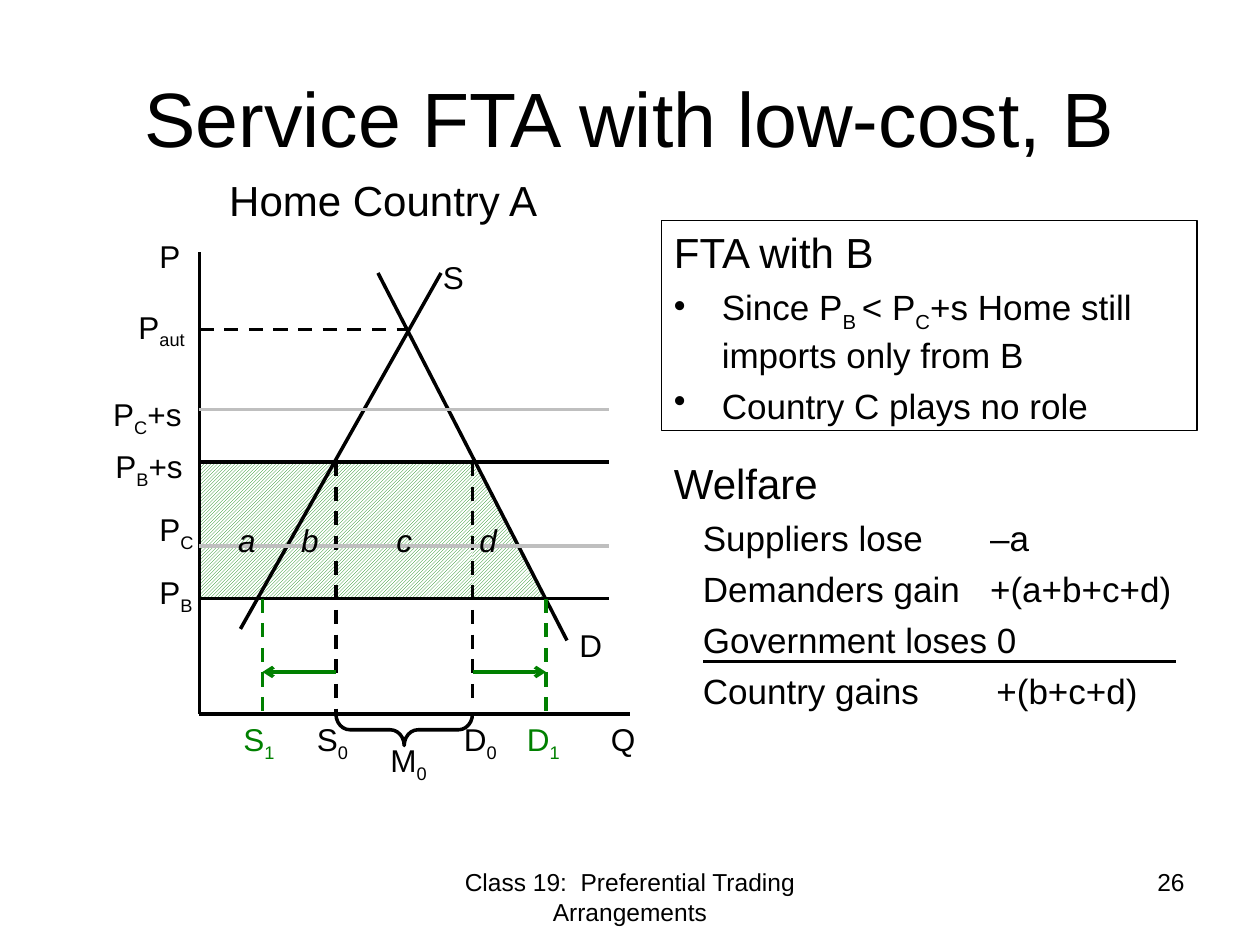
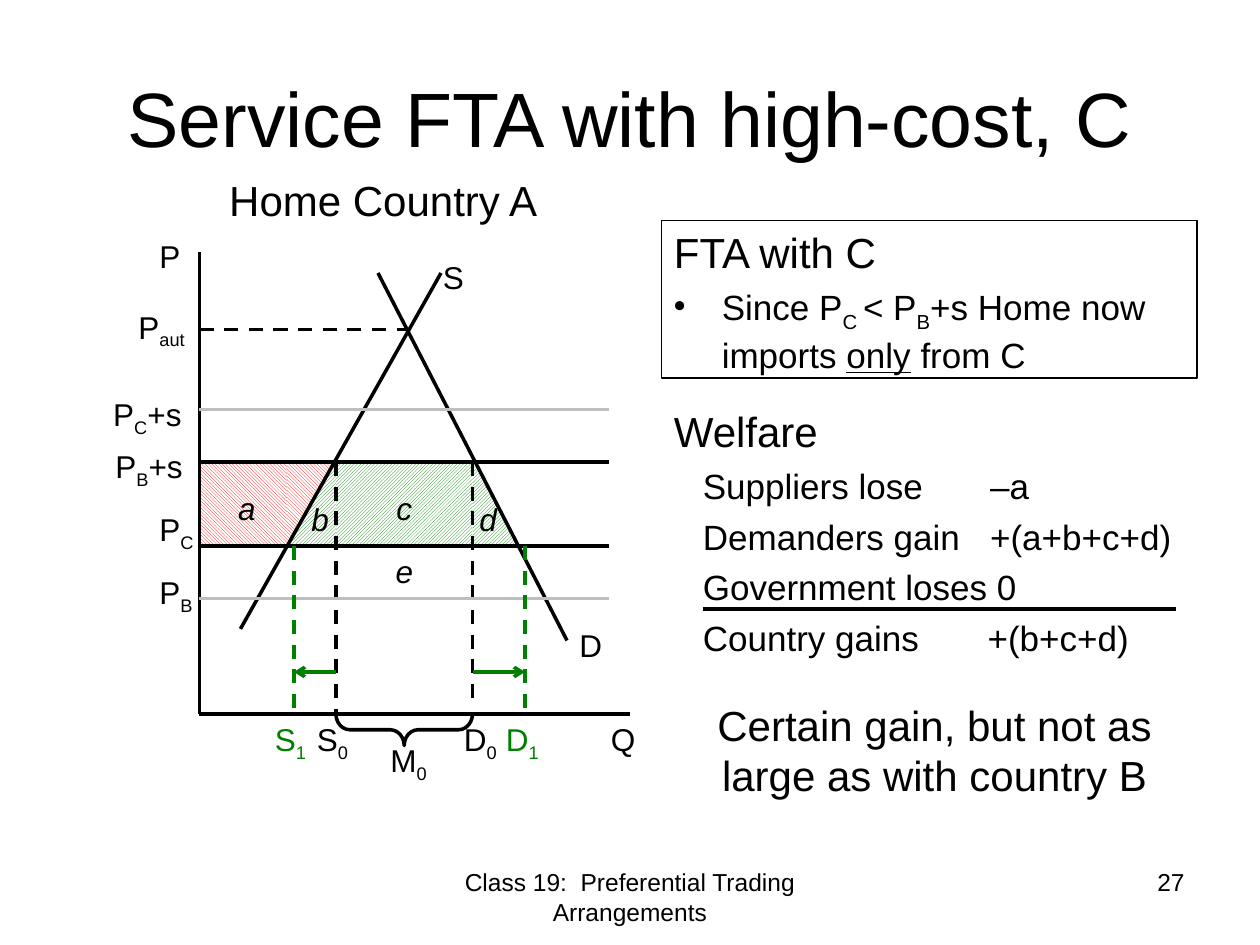
from lxml import etree
from pptx import Presentation
from pptx import util as u
from pptx.dml.color import RGBColor
from pptx.enum import dml, shapes, text
from pptx.oxml.ns import qn

COLS, ROWS = 120, 90
BLACK, WHITE, GRAY = "000000", "FFFFFF", "BFBFBF"
GREEN, RED = "008000", "FF0000"
FONT = "Arial"
TITLE, HEAD, BODY, LABEL, FOOT = 44, 24, 20, 18, 14
LEFT, CENTER, RIGHT = text.PP_ALIGN.LEFT, text.PP_ALIGN.CENTER, text.PP_ALIGN.RIGHT
RECT = shapes.MSO_SHAPE.RECTANGLE
TRIANGLE = shapes.MSO_SHAPE.RIGHT_TRIANGLE
HATCH = {GREEN: dml.MSO_PATTERN.DARK_UPWARD_DIAGONAL,
         RED: dml.MSO_PATTERN.DARK_DOWNWARD_DIAGONAL}

AXIS, BASE = 19, 68
S0, D0 = 32, 45
PC_S, PB_S, PC, PB = 39, 44, 52, 57


def color(value):
    return RGBColor.from_string(value)


class Deck:
    def __init__(self):
        self.prs = Presentation()
        self.prs.slide_width = u.Inches(10)
        self.prs.slide_height = u.Inches(7.5)
        self.slide = None

    def x(self, col):
        return round(self.prs.slide_width * col / COLS)

    def y(self, row):
        return round(self.prs.slide_height * row / ROWS)

    def box(self, col, row, w, h):
        return self.x(col), self.y(row), self.x(w), self.y(h)

    def start(self, title, number):
        self.slide = self.prs.slides.add_slide(self.prs.slide_layouts[6])
        tf = self.text(title, 6, 3.6, 108, 15, TITLE, CENTER)
        tf.vertical_anchor = text.MSO_ANCHOR.MIDDLE
        self.text("Class 19:  Preferential Trading Arrangements", 41, 82, 38, 6.2, FOOT, CENTER)
        self.text(str(number), 86, 82, 28, 6.2, FOOT, RIGHT)

    def runs(self, p, content, size, ink=BLACK, italic=False):
        for i, part in enumerate(content.split("_")):
            for j, piece in enumerate(part.split("~")):
                if not piece:
                    continue
                r = p.add_run()
                r.text = piece
                r.font.name = FONT
                r.font.size = u.Pt(size)
                r.font.color.rgb = color(ink)
                if italic:
                    r.font.italic = True
                if j % 2:
                    r.font.underline = True
                if i % 2:
                    r.font._element.set("baseline", "-25000")

    def frame(self, col, row, w, h, outline=None):
        sp = self.slide.shapes.add_textbox(*self.box(col, row, w, h))
        if outline:
            sp.line.color.rgb = color(outline)
            sp.line.width = u.Pt(0.75)
        sp.text_frame.word_wrap = True
        return sp.text_frame

    def text(self, content, col, row, w, h, size, align=LEFT, ink=BLACK, italic=False):
        tf = self.frame(col, row, w, h)
        p = tf.paragraphs[0]
        p.alignment = align
        self.runs(p, content, size, ink, italic)
        return tf

    def label(self, content, col, row, w=9, **style):
        self.text(content, col, row, w, 4.8, LABEL, **style)

    def panel(self, row, h, heading, outline=None):
        tf = self.frame(63, row, 51, h, outline)
        p = tf.paragraphs[0]
        p.space_before = u.Pt(5)
        self.runs(p, heading, HEAD)
        return tf

    def item(self, tf, content):
        p = tf.add_paragraph()
        p.space_before = u.Pt(5)
        self.runs(p, content, BODY)
        return p._p.get_or_add_pPr()

    def bullets(self, row, h, heading, items):
        tf = self.panel(row, h, heading, BLACK)
        for content in items:
            pPr = self.item(tf, content)
            pPr.set("marL", str(u.Inches(0.38)))
            pPr.set("indent", str(-u.Inches(0.38)))
            etree.SubElement(pPr, qn("a:buChar")).set("char", "•")

    def tabbed(self, row, h, heading, items):
        tf = self.panel(row, h, heading)
        for content, stop in items:
            pPr = self.item(tf, "\t" + content)
            tabs = etree.SubElement(pPr, qn("a:tabLst"))
            for pos in (0.23, stop):
                tab = etree.SubElement(tabs, qn("a:tab"))
                tab.set("pos", str(u.Inches(pos)))
                tab.set("algn", "l")

    def line(self, x1, y1, x2, y2, ink=BLACK, dash=False, arrow=False):
        c = self.slide.shapes.add_connector(
            shapes.MSO_CONNECTOR.STRAIGHT, self.x(x1), self.y(y1), self.x(x2), self.y(y2))
        c.line.color.rgb = color(ink)
        c.line.width = u.Pt(2)
        if dash:
            c.line.dash_style = dml.MSO_LINE.DASH
        if arrow:
            etree.SubElement(c.line._get_or_add_ln(), qn("a:tailEnd")).set("type", "arrow")
        etree.SubElement(c._element.spPr, qn("a:effectLst"))

    def hatch(self, kind, left, right, bottom, ink, flip=None):
        sp = self.slide.shapes.add_shape(kind, *self.box(left, PB_S, right - left, bottom - PB_S))
        sp.shadow.inherit = False
        sp.line.fill.background()
        sp.fill.patterned()
        sp.fill.pattern = HATCH[ink]
        sp.fill.fore_color.rgb = color(ink)
        sp.fill.back_color.rgb = color(WHITE)
        if flip:
            sp._element.spPr.find(qn("a:xfrm")).set(flip, "1")

    def brace(self, col, row, w, h):
        sp = self.slide.shapes.add_shape(shapes.MSO_SHAPE.LEFT_BRACE, *self.box(col, row, w, h))
        sp.shadow.inherit = False
        sp.rotation = 270
        sp.adjustments[0] = 0.44
        sp.fill.background()
        sp.line.color.rgb = color(BLACK)
        sp.line.width = u.Pt(2)


def draw_market(s, price, areas, s1, d1, letters):
    for area in areas:
        s.hatch(*area)

    s.line(AXIS, BASE, 60, BASE)
    s.line(AXIS, BASE, AXIS, 24)
    s.line(54, 61, 36, 26)
    s.line(22.9, 59.9, 42, 26)
    s.line(AXIS, 31.4, 39, 31.4, dash=True)
    s.line(D0, PB_S, D0, 67, dash=True)
    s.line(S0, PB_S, S0, BASE, dash=True)
    for row in (PC_S, PB_S, PC, PB):
        s.line(AXIS, row, 58, row, BLACK if row in (PB_S, price) else GRAY)
    s.brace(37, 63, 3, 13)

    for old, new, name in ((S0, s1, "S_1_"), (D0, d1, "D_1_")):
        s.line(new, price, new, BASE, GREEN, dash=True)
        s.line(old, 64, new, 64, GREEN, arrow=True)
        s.label(name, new - 3, BASE, 6, ink=GREEN)

    for name, col, row, w in (
            ("P", 14, 22, 9), ("S", 41, 24, 9), ("P_aut_", 12, 28.7, 9),
            ("P_C_+s", 9.6, 37, 10.4), ("P_B_+s", 9.8, 42, 9),
            ("P_C_", 14, 48, 6), ("P_B_", 14, 54, 6), ("D", 54, 59, 5),
            ("Q", 57, BASE, 9), ("S_0_", 29, BASE, 6), ("D_0_", 43, BASE, 6),
            ("M_0_", 36, 70, 7)):
        s.label(name, col, row, w)
    for name, col, row in letters:
        s.label(name, col, row, align=CENTER, italic=True)
    s.text("Home Country A", 20, 16, 33, 6, HEAD, CENTER)


def draw_welfare(s, row, country_stop):
    s.tabbed(row, 26, "Welfare", [
        ("Suppliers lose\t–a", 2.51),
        ("Demanders gain\t+(a+b+c+d)", 2.51),
        ("Government loses 0", 2.51),
        ("Country gains\t+(b+c+d)", country_stop)])
    s.line(67, row + 20, 112, row + 20)


def low_cost(s):
    s.start("Service FTA with low-cost, B", 26)
    draw_market(
        s, PB,
        [(RECT, AXIS, D0, PB, GREEN), (TRIANGLE, D0, 52, PB, GREEN)],
        25, 52,
        [("a", 19, 49), ("b", 25, 49), ("c", 34, 49), ("d", 42, 49)])
    s.bullets(21, 20, "FTA with B", [
        "Since P_B _< P_C_+s Home still imports only from B",
        "Country C plays no role"])
    draw_welfare(s, 43, 2.56)


def high_cost(s):
    s.start("Service FTA with high-cost, C", 27)
    supply, demand = 27.3, 49.4
    draw_market(
        s, PC,
        [(RECT, AXIS, supply, PC, RED),
         (TRIANGLE, supply, S0, PC, RED, "flipV"),
         (TRIANGLE, supply, S0, PC, GREEN, "flipH"),
         (RECT, S0, D0, PC, GREEN),
         (TRIANGLE, D0, demand, PC, GREEN)],
        28, 50,
        [("a", 19, 46), ("b", 26, 47), ("c", 34, 46), ("d", 42, 47), ("e", 34, 52)])
    s.bullets(21, 15, "FTA with C", [
        "Since P_C _< P_B_+s Home now imports ~only~ from C"])
    draw_welfare(s, 38, 2.49)
    s.text("Certain gain, but not as large as with country B", 66, 66, 46, 11, HEAD, CENTER)


def main():
    s = Deck()
    low_cost(s)
    high_cost(s)
    s.prs.save("out.pptx")


if __name__ == "__main__":
    main()
